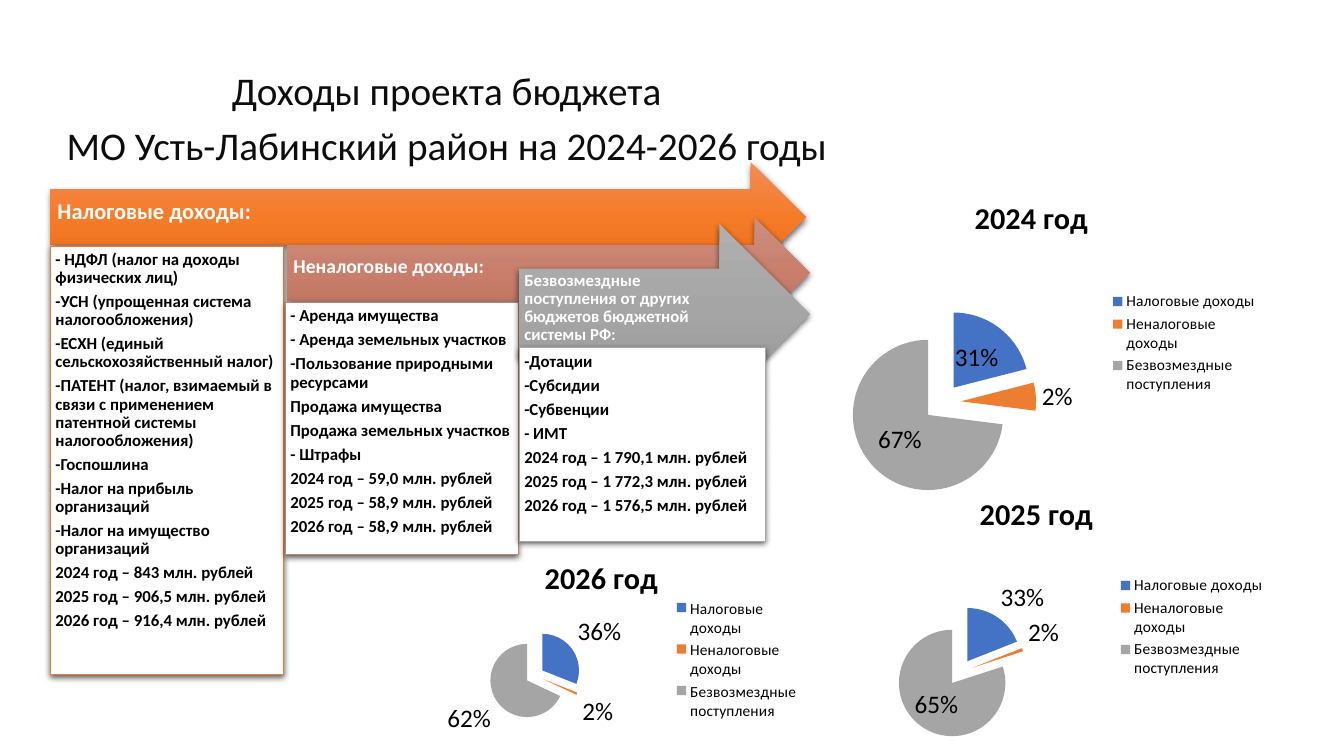
"""Build the slide on the revenues of the district budget for 2024-2026."""
from copy import deepcopy
from dataclasses import dataclass

from pptx import Presentation
from pptx.chart.chart import Chart
from pptx.chart.data import CategoryChartData
from pptx.dml.color import RGBColor
from pptx.enum.chart import XL_CHART_TYPE, XL_LABEL_POSITION, XL_LEGEND_POSITION
from pptx.enum.shapes import MSO_SHAPE
from pptx.enum.text import MSO_ANCHOR, PP_ALIGN
from pptx.oxml import parse_xml
from pptx.oxml.ns import nsdecls, qn
from pptx.shapes.autoshape import Shape
from pptx.slide import Slide
from pptx.util import Emu, Pt

PX = 9144
FONT = "Calibri"
ARROW, RECT = MSO_SHAPE.RIGHT_ARROW, MSO_SHAPE.RECTANGLE
TOP, MIDDLE = MSO_ANCHOR.TOP, MSO_ANCHOR.MIDDLE
LEFT, CENTER = PP_ALIGN.LEFT, PP_ALIGN.CENTER
PIE, RIGHT = XL_CHART_TYPE.PIE, XL_LEGEND_POSITION.RIGHT
MID, OUT = XL_LABEL_POSITION.CENTER, XL_LABEL_POSITION.OUTSIDE_END

HEX = {
    "black": "000000", "white": "FFFFFF", "title": "0D0D0D",
    "blue": "4472C4", "orange": "ED7D31", "gray": "A5A5A5", "rose": "C48170",
}
FADE = {
    "orange": ("F18C57", "F67B28", "E56C19"),
    "rose": ("CB8F81", "C97E6B", "B76D5B"),
    "gray": ("AFAFAF", "A5A5A5", "939393"),
}
TITLE = ["Доходы проекта бюджета", "МО Усть-Лабинский район на 2024-2026 годы"]
KINDS = ["Налоговые доходы", "Неналоговые доходы", "Безвозмездные поступления"]
SLICES = ["blue", "orange", "gray"]

Box = tuple[int, int, int, int]


@dataclass
class Stream:
    hue: str
    arrow: Box
    head: str
    size: int
    pad: int
    card: Box
    items: list[str]


@dataclass
class Pie:
    year: int
    box: Box
    plot: Box
    key: Box
    vals: list[int]
    labels: list[str]
    spots: list[XL_LABEL_POSITION]


STREAMS = [
    Stream("orange", (50, 161, 749, 109), "Налоговые доходы:", 16, 7, (50, 244, 231, 425), [
        "- НДФЛ (налог на доходы физических лиц)",
        "-УСН (упрощенная система налогообложения)",
        "-ЕСХН (единый сельскохозяйственный налог)",
        "-ПАТЕНТ (налог, взимаемый в связи с применением патентной системы налогообложения)",
        "-Госпошлина",
        "-Налог на прибыль организаций",
        "-Налог на имущество организаций",
        "2024 год – 843 млн. рублей",
        "2025 год – 906,5 млн. рублей",
        "2026 год – 916,4 млн. рублей",
    ]),
    Stream("rose", (285, 216, 518, 109), "Неналоговые доходы:", 14, 6, (283, 300, 231, 250), [
        "- Аренда имущества",
        "- Аренда земельных участков",
        "-Пользование природными ресурсами",
        "Продажа имущества",
        "Продажа земельных участков",
        "- Штрафы",
        "2024 год – 59,0 млн. рублей",
        "2025 год – 58,9 млн. рублей",
        "2026 год – 58,9 млн. рублей",
    ]),
    Stream("gray", (515, 222, 288, 179),
           "Безвозмездные поступления от других бюджетов бюджетной системы РФ:",
           12, 5, (515, 345, 244, 192), [
        "-Дотации",
        "-Субсидии",
        "-Субвенции",
        "- ИМТ",
        "2024 год – 1 790,1 млн. рублей",
        "2025 год – 1 772,3 млн. рублей",
        "2026 год – 1 576,5 млн. рублей",
    ]),
]
PIES = [
    Pie(2024, (790, 178, 466, 328), (11, 39, 40, 57), (66, 33, 33, 33),
        [21, 6, 73], ["31%", "2%", "67%"], [MID, OUT, MID]),
    Pie(2025, (791, 472, 474, 300), (20, 43, 28, 44), (66, 32, 33, 36),
        [19, 1, 80], ["33%", "2%", "65%"], [OUT, OUT, MID]),
    Pie(2026, (390, 537, 413, 236), (23, 37, 22, 39), (67, 23, 31, 54),
        [31, 1, 68], ["36%", "2%", "62%"], [OUT, OUT, OUT]),
]


def scale(box: Box) -> list[Emu]:
    return [Emu(n * PX) for n in box]


def tint(name: str) -> RGBColor:
    return RGBColor.from_string(HEX[name])


def write(shape: Shape, lines: list[str], size: float, hue: str, bold: bool = True,
          align: PP_ALIGN = LEFT, anchor: MSO_ANCHOR = TOP, pads: Box = (5, 5, 5, 5)) -> None:
    frame = shape.text_frame
    frame.word_wrap = True
    frame.vertical_anchor = anchor
    (frame.margin_left, frame.margin_top,
     frame.margin_right, frame.margin_bottom) = scale(pads)
    frame.text = "\n".join(lines)
    for para in frame.paragraphs:
        para.alignment = align
        font = para.font
        font.name, font.size, font.bold = FONT, Pt(size), bold
        font.color.rgb = tint(hue)


def space(shape: Shape, size: int) -> None:
    for para in shape.text_frame.paragraphs:
        para.line_spacing = 0.9
        para.space_after = Pt(size * 0.35)


def shade(shape: Shape) -> None:
    shape.shadow.inherit = False
    shape._element.spPr.find(qn("a:effectLst")).append(parse_xml(
        f'<a:outerShdw {nsdecls("a")} blurRad="57150" dist="19050" dir="5400000" '
        'algn="ctr" rotWithShape="0"><a:srgbClr val="000000">'
        '<a:alpha val="63000"/></a:srgbClr></a:outerShdw>'))


def fade(shape: Shape, hues: tuple[str, str, str]) -> None:
    fill = shape.fill
    fill.gradient()
    fill.gradient_angle = 270
    stops = shape._element.spPr.find(".//" + qn("a:gsLst"))
    stops.append(deepcopy(stops[0]))
    for step, (stop, hue) in enumerate(zip(fill.gradient_stops, hues)):
        stop.color.rgb = RGBColor.from_string(hue)
        stop.position = step / 2


def draw_stream(slide: Slide, item: Stream) -> None:
    arrow = slide.shapes.add_shape(ARROW, *scale(item.arrow))
    fade(arrow, FADE[item.hue])
    arrow.line.fill.background()
    shade(arrow)
    write(arrow, [item.head], item.size, "white", anchor=MIDDLE,
          pads=(item.pad, item.pad, 28, 17))
    space(arrow, item.size)

    card = slide.shapes.add_shape(RECT, *scale(item.card))
    card.fill.solid()
    card.fill.fore_color.rgb = tint("white")
    card.line.color.rgb = tint(item.hue)
    card.line.width = Pt(0.5)
    shade(card)
    write(card, item.items, 12, "black")
    space(card, 12)


def layout(box: Box, inner: bool = False):
    parts = '<c:layoutTarget val="inner"/>' if inner else ""
    parts += '<c:xMode val="edge"/><c:yMode val="edge"/>'
    parts += "".join(f'<c:{tag} val="{n / 100}"/>' for tag, n in zip("xywh", box))
    return parse_xml(f'<c:layout {nsdecls("c")}><c:manualLayout>{parts}</c:manualLayout></c:layout>')


def style(chart: Chart, pie: Pie) -> None:
    font = chart.font
    font.name, font.size, font.color.rgb = FONT, Pt(18), tint("black")
    chart.has_title = True
    write_title = chart.chart_title.text_frame
    write_title.text = f"{pie.year} год"
    head = write_title.paragraphs[0].font
    head.name, head.size, head.bold = FONT, Pt(21.6), True
    head.color.rgb = tint("black")

    chart.has_legend = True
    key = chart.legend
    key.position = RIGHT
    key.include_in_layout = False
    key.font.size, key.font.name = Pt(11), FONT
    key._element.insert(1, layout(pie.key))
    area = chart._chartSpace.chart.plotArea
    for old in area.findall(qn("c:layout")):
        area.remove(old)
    area.insert(0, layout(pie.plot, True))


def draw_pie(slide: Slide, pie: Pie) -> None:
    data = CategoryChartData()
    data.categories = KINDS
    data.add_series("Series 1", pie.vals)
    chart = slide.shapes.add_chart(PIE, *scale(pie.box), data).chart
    style(chart, pie)
    plot = chart.plots[0]
    plot.vary_by_categories = True
    row = plot.series[0]
    row._element.find(qn("c:tx")).addnext(
        parse_xml(f'<c:explosion {nsdecls("c")} val="25"/>'))
    row.data_labels.show_percentage = True
    row.data_labels.show_value = False
    for i, (hue, text, spot) in enumerate(zip(SLICES, pie.labels, pie.spots)):
        point = row.points[i]
        point.format.fill.solid()
        point.format.fill.fore_color.rgb = tint(hue)
        label = point.data_label
        label.text_frame.text = text
        font = label.text_frame.paragraphs[0].font
        font.name, font.size, font.color.rgb = FONT, Pt(18), tint("black")
        label.position = spot


def main() -> None:
    deck = Presentation()
    deck.slide_width, deck.slide_height = Emu(1333 * PX), Emu(750 * PX)
    slide = deck.slides.add_slide(deck.slide_layouts[6])
    title = slide.shapes.add_textbox(*scale((0, 61, 886, 45)))
    write(title, TITLE, 28, "title", False, CENTER, pads=(10, 5, 10, 5))
    title.text_frame.paragraphs[1].space_before = Pt(5.6)
    for item in STREAMS:
        draw_stream(slide, item)
    for pie in PIES:
        draw_pie(slide, pie)
    deck.save("out.pptx")


if __name__ == "__main__":
    main()
